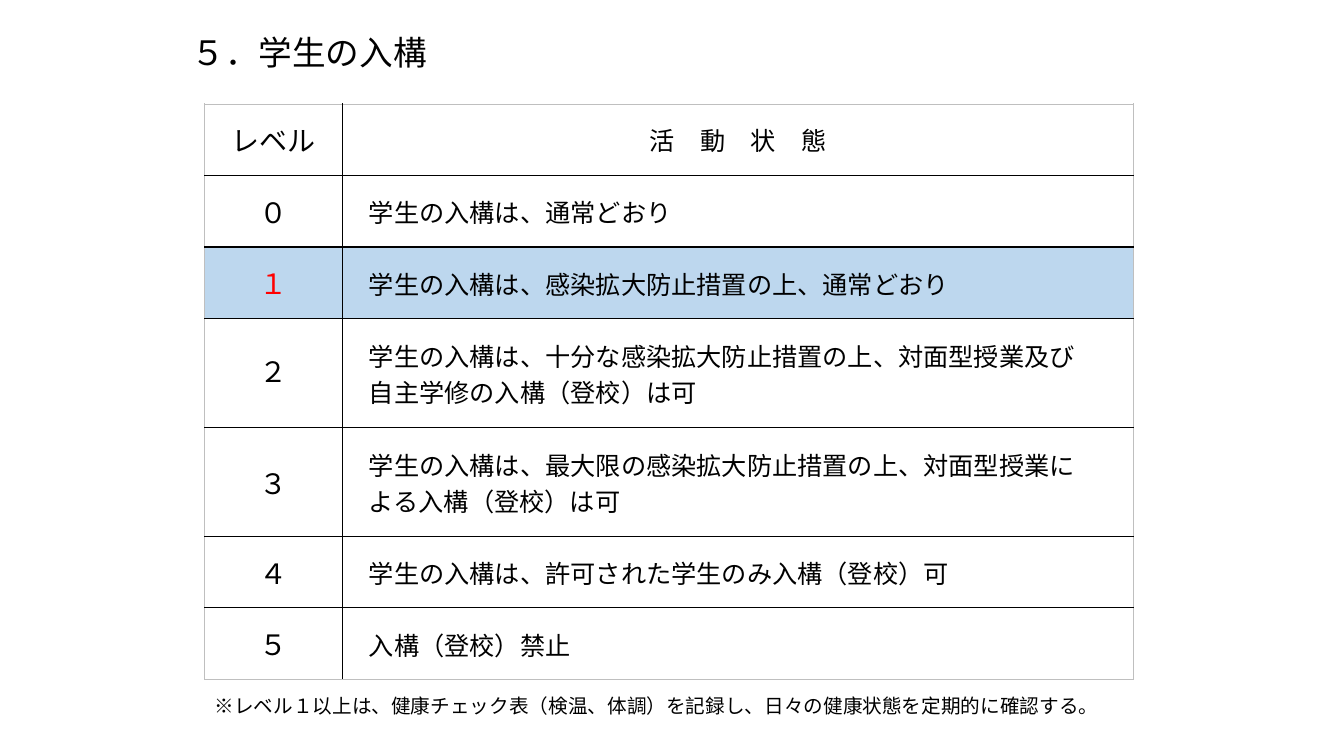
from lxml.etree import SubElement
from pptx import Presentation
from pptx.dml.color import RGBColor
from pptx.enum.shapes import MSO_SHAPE
from pptx.enum.text import MSO_ANCHOR, MSO_AUTO_SIZE, PP_ALIGN
from pptx.oxml.ns import qn
from pptx.util import Inches, Pt

FONT = "Noto Sans CJK JP"
BLACK, WHITE, RED, BLUE, GRAY = "000000", "FFFFFF", "FF0000", "BDD7EE", "BFBFBF"
CURRENT_LEVEL = 1


def write(frame, text, size=18, color=BLACK, font=FONT, align=PP_ALIGN.LEFT):
    """Fill a text frame, one paragraph per line of text."""
    frame.text = text
    frame.word_wrap = True
    for paragraph in frame.paragraphs:
        paragraph.alignment = align
        for run in paragraph.runs:
            run.font.size = Pt(size)
            run.font.name = font
            run.font.color.rgb = RGBColor.from_string(color)
            SubElement(run.font._element, qn("a:ea"), typeface=font)


def add_border(cell, side, color, width):
    line = SubElement(cell._tc.get_or_add_tcPr(), qn(f"a:ln{side}"), w=str(Pt(width)))
    fill = SubElement(line, qn("a:solidFill"))
    SubElement(fill, qn("a:srgbClr"), val=color)


presentation = Presentation()
presentation.slide_width = Inches(13.33)
presentation.slide_height = Inches(7.5)
slide = presentation.slides.add_slide(presentation.slide_layouts[5])

title = slide.shapes.title
title.left, title.top = Inches(1.8), Inches(0.27)
title.width, title.height = Inches(3.06), Inches(0.5)
write(title.text_frame, "５．学生の入構", size=24)
title.text_frame.auto_size = MSO_AUTO_SIZE.NONE
title.text_frame.vertical_anchor = MSO_ANCHOR.MIDDLE

levels = [
    ("レベル", "活　動　状　態"),
    ("０", "学生の入構は、通常どおり"),
    ("１", "学生の入構は、感染拡大防止措置の上、通常どおり"),
    ("２", "学生の入構は、十分な感染拡大防止措置の上、対面型授業及び\n自主学修の入構（登校）は可"),
    ("３", "学生の入構は、最大限の感染拡大防止措置の上、対面型授業に\nよる入構（登校）は可"),
    ("４", "学生の入構は、許可された学生のみ入構（登校）可"),
    ("５", "入構（登校）禁止"),
]
last_row = len(levels) - 1
table = slide.shapes.add_table(
    len(levels), 2, Inches(2.03), Inches(1.03), Inches(9.21), Inches(5.71)
).table
table.first_row = table.horz_banding = False
table.columns[0].width = Inches(1.37)
table.columns[1].width = Inches(7.84)

for row, texts in enumerate(levels):
    table.rows[row].height = Inches(1.08 if "\n" in texts[1] else 0.71)
    is_current = row == CURRENT_LEVEL + 1
    for column, text in enumerate(texts):
        cell = table.cell(row, column)
        is_level = column == 0
        outer_sides = {"L": column == 0, "R": column == 1, "T": row == 0, "B": row == last_row}
        for side, is_outer in outer_sides.items():
            add_border(cell, side, GRAY if is_outer else BLACK, 0.5 if is_outer else 1)
        cell.fill.solid()
        cell.fill.fore_color.rgb = RGBColor.from_string(BLUE if is_current else WHITE)
        cell.vertical_anchor = MSO_ANCHOR.MIDDLE
        if row > 0 and not is_level:
            cell.margin_left = Inches(0.26)
            cell.margin_right = cell.margin_top = Inches(0.01)
            cell.margin_bottom = 0
        write(
            cell.text_frame,
            text,
            size=20 if is_level else 18,
            color=RED if is_current and is_level else BLACK,
            font="Arial" if text == "２" else FONT,
            align=PP_ALIGN.CENTER if is_level or row == 0 else PP_ALIGN.LEFT,
        )

note = slide.shapes.add_shape(
    MSO_SHAPE.FLOWCHART_PROCESS, Inches(2.03), Inches(6.75), Inches(9.45), Inches(0.51)
)
note.shadow.inherit = False
note.fill.background()
note.line.fill.background()
note.text_frame.vertical_anchor = MSO_ANCHOR.MIDDLE
write(
    note.text_frame,
    "※レベル１以上は、健康チェック表（検温、体調）を記録し、日々の健康状態を定期的に確認する。",
    size=14,
)

presentation.save("out.pptx")
